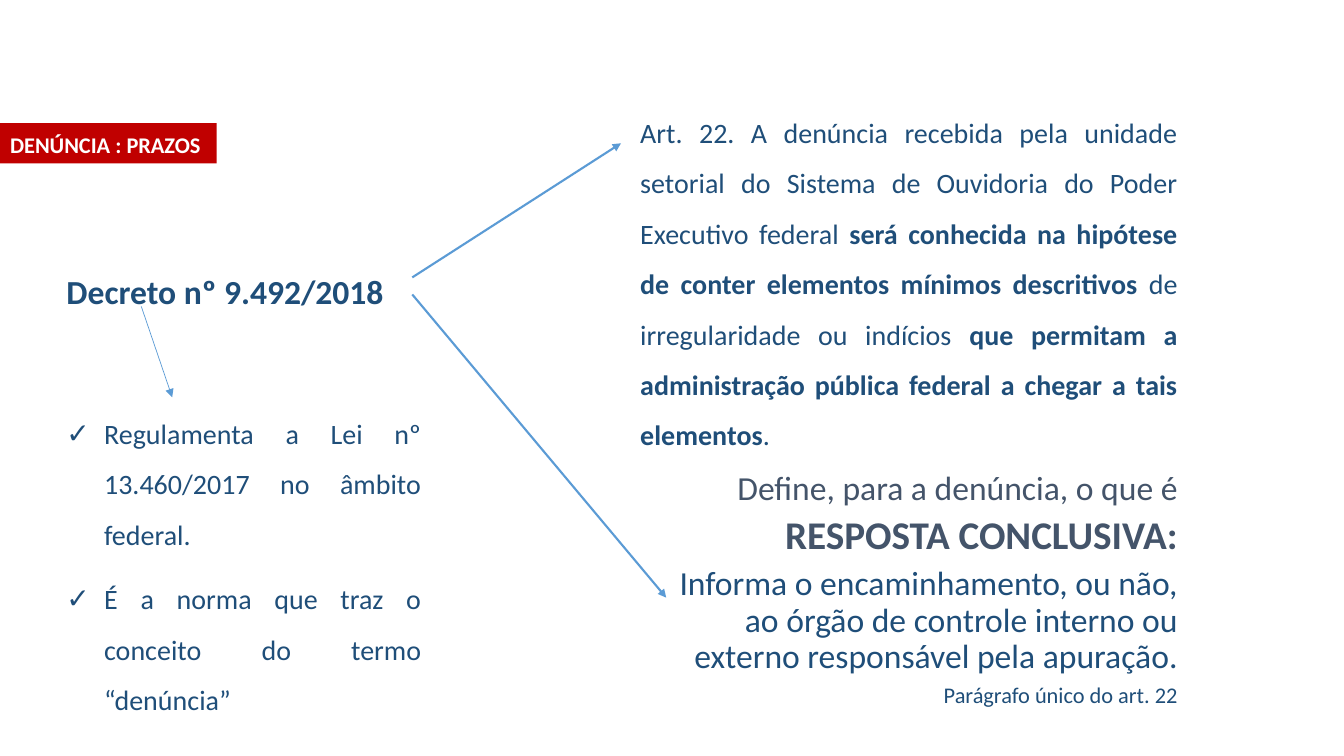
from lxml import etree
from pptx import Presentation
from pptx import util as u
from pptx.dml.color import RGBColor
from pptx.enum import shapes, text
from pptx.oxml import ns

COLORS = {"navy": "1F4E79", "slate": "44546A", "arrow": "5B9BD5",
          "label": "C00000", "white": "FFFFFF"}
ALIGN = text.PP_ALIGN


def color(name):
    return RGBColor.from_string(COLORS[name])


def place(shape, left, top, width, height, anchor=text.MSO_ANCHOR.TOP):
    """Move a text shape (lengths in cm) and return its text frame."""
    shape.left, shape.top = u.Cm(left), u.Cm(top)
    shape.width, shape.height = u.Cm(width), u.Cm(height)
    frame = shape.text_frame
    frame.word_wrap = True
    frame.auto_size = text.MSO_AUTO_SIZE.NONE
    frame.vertical_anchor = anchor
    return frame


def set_bullet(paragraph, character=None, indent=0):
    properties = paragraph._p.get_or_add_pPr()
    properties.set("marL", str(u.Cm(indent)))
    properties.set("indent", str(-u.Cm(indent)))
    tag = "a:buChar" if character else "a:buNone"
    bullet = etree.SubElement(properties, ns.qn(tag))
    if character:
        bullet.set("char", character)


def write(paragraph, parts, size, color_name="navy", align=ALIGN.LEFT,
          spacing=1.0, before=0):
    """Fill a paragraph with (wording, bold) parts."""
    paragraph.alignment = align
    paragraph.line_spacing = spacing
    paragraph.space_before = u.Pt(before)
    for wording, bold in parts:
        run = paragraph.add_run()
        run.text = wording
        run.font.name = "Calibri"
        run.font.size = u.Pt(size)
        run.font.bold = bold
        run.font.color.rgb = color(color_name)


def add_label(slide):
    title = slide.shapes.title
    title.fill.solid()
    title.fill.fore_color.rgb = color("label")
    frame = place(title, 0, 3.1, 5.46, 1.02, text.MSO_ANCHOR.BOTTOM)
    write(frame.paragraphs[0], [("DENÚNCIA : PRAZOS", True)], 16, "white")


def add_decree(slide):
    frame = place(slide.placeholders[1], 1.42, 6.2, 9.45, 12.62)
    heading = frame.paragraphs[0]
    set_bullet(heading)
    write(heading, [("Decreto nº 9.492/2018", True)], 24, spacing=1.5)
    items = [("Regulamenta a Lei nº 13.460/2017 no âmbito federal.", 63),
             ("É a norma que traz o conceito do termo “denúncia”", 10)]
    for wording, before in items:
        paragraph = frame.add_paragraph()
        set_bullet(paragraph, "✓", 0.95)
        write(paragraph, [(wording, False)], 20, align=ALIGN.JUSTIFY,
              spacing=1.5, before=before)


def add_article(slide):
    frame = place(slide.placeholders[2], 15.88, 2.36, 14.05, 9.27)
    paragraph = frame.paragraphs[0]
    set_bullet(paragraph)
    write(paragraph, [
        ("Art. 22. A denúncia recebida pela unidade setorial do Sistema de "
         "Ouvidoria do Poder Executivo federal ", False),
        ("será conhecida na hipótese de conter elementos mínimos descritivos", True),
        (" de irregularidade ou indícios ", False),
        ("que permitam a administração pública federal a chegar a tais "
         "elementos", True),
        (".", False),
    ], 20, align=ALIGN.JUSTIFY, spacing=1.5)


def add_answer(slide):
    box = slide.shapes.add_textbox(0, 0, 0, 0)
    frame = place(box, 16.79, 11.63, 13.14, 6.83)
    frame.margin_top = frame.margin_bottom = u.Cm(0.25)
    lines = [
        ("Define, para a denúncia, o que é", 24, "slate", False),
        ("RESPOSTA CONCLUSIVA:", 28, "slate", True),
        ("Informa o encaminhamento, ou não, ao órgão de controle interno ou "
         "externo responsável pela apuração.", 24, "navy", False),
        ("Parágrafo único do art. 22", 16, "navy", False),
    ]
    for index, (wording, size, color_name, bold) in enumerate(lines):
        paragraph = frame.add_paragraph() if index else frame.paragraphs[0]
        write(paragraph, [(wording, bold)], size, color_name, ALIGN.RIGHT,
              0.9, 6 if index else 0)


def add_arrow(slide, start, end, width):
    points = [u.Cm(value) for value in (*start, *end)]
    arrow = slide.shapes.add_connector(shapes.MSO_CONNECTOR.STRAIGHT, *points)
    arrow.line.color.rgb = color("arrow")
    arrow.line.width = u.Pt(width)
    etree.SubElement(arrow.line._get_or_add_ln(), ns.qn("a:tailEnd"), type="triangle")
    etree.SubElement(arrow._element.spPr, ns.qn("a:effectLst"))


def main():
    presentation = Presentation()
    presentation.slide_width = u.Cm(33.87)
    presentation.slide_height = u.Cm(19.05)
    two_content = presentation.slide_layouts[3]
    slide = presentation.slides.add_slide(two_content)
    add_label(slide)
    add_decree(slide)
    add_article(slide)
    add_answer(slide)
    add_arrow(slide, (10.39, 6.99), (15.65, 3.61), 1.5)
    add_arrow(slide, (3.56, 7.72), (4.34, 10.01), 0.5)
    add_arrow(slide, (10.39, 7.42), (16.79, 15.06), 1.5)
    presentation.save("out.pptx")


if __name__ == "__main__":
    main()
